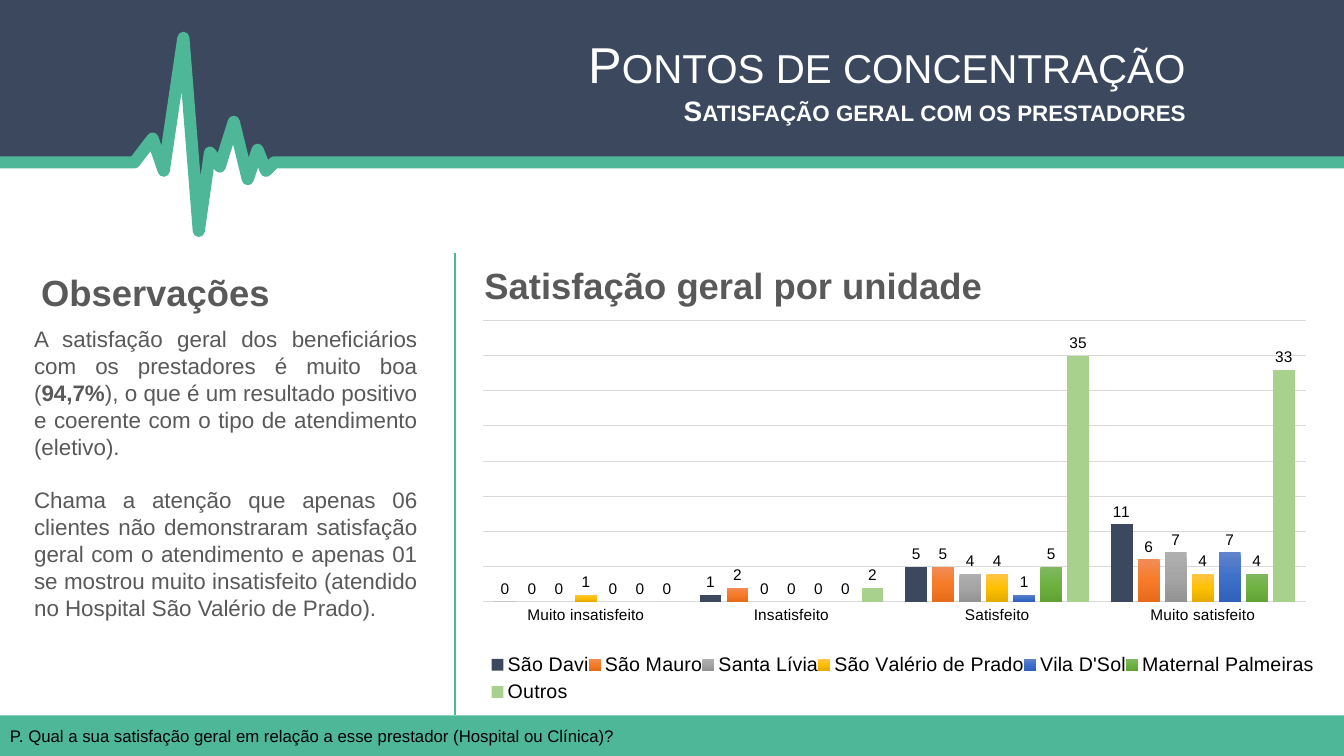
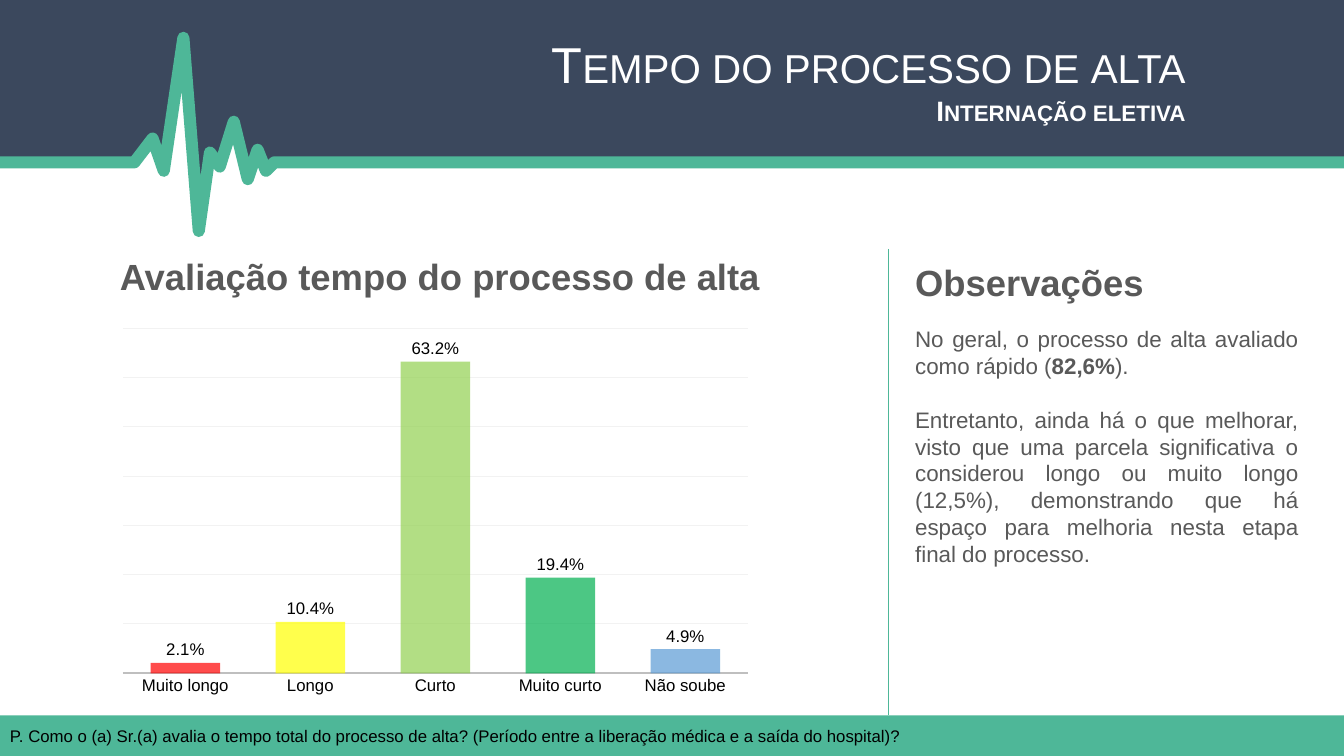
import copy

import pptx
import pptx.chart.data
import pptx.dml.color
import pptx.enum.chart
import pptx.enum.shapes
import pptx.enum.text
import pptx.oxml
import pptx.oxml.ns
import pptx.util
from lxml import etree

Pt = pptx.util.Pt
RGB = pptx.dml.color.RGBColor
qn = pptx.oxml.ns.qn
ALIGN = pptx.enum.text.PP_ALIGN

NAVY = RGB(0x3B, 0x48, 0x5D)
GREEN = RGB(0x4E, 0xB7, 0x98)
GRAY = RGB(0x59, 0x59, 0x59)
WHITE = RGB(0xFF, 0xFF, 0xFF)
BLACK = RGB(0, 0, 0)
GRID = RGB(0xD9, 0xD9, 0xD9)
PALE_GRID = RGB(0xF2, 0xF2, 0xF2)
AXIS = RGB(0xBF, 0xBF, 0xBF)
LEAF = RGB(0xA9, 0xD1, 0x8E)
ORANGES = (RGB(0xF1, 0x8C, 0x57), RGB(0xF6, 0x7B, 0x28), RGB(0xE5, 0x6C, 0x19))
SILVERS = (RGB(0xAF, 0xAF, 0xAF), RGB(0xA5, 0xA5, 0xA5), RGB(0x93, 0x93, 0x93))
GOLDS = (RGB(0xFF, 0xC6, 0x4B), RGB(0xFF, 0xC0, 0x00), RGB(0xE3, 0xAB, 0x00))
BLUES = (RGB(0x61, 0x83, 0xCB), RGB(0x3E, 0x70, 0xCA), RGB(0x30, 0x62, 0xBB))
GREENS = (RGB(0x81, 0xB8, 0x61), RGB(0x6F, 0xB2, 0x42), RGB(0x62, 0xA3, 0x36))
RATINGS = (RGB(0xFF, 0, 0), RGB(0xFF, 0xFF, 0), RGB(0x92, 0xD0, 0x50),
           RGB(0, 0xB0, 0x50), RGB(0x5B, 0x9B, 0xD5))

FONT = "Arial"
WIDTH, HEIGHT = 960, 540
BAR_TOP = 511
PULSE = [(0, 116), (96, 116), (108.7, 99.4), (117.4, 121.7), (131, 27.2),
         (141.8, 164.9), (149.8, 109), (157.3, 118.8), (167, 87.1),
         (177.3, 128.5), (184.5, 107.3), (190.3, 121.7), (195.8, 116),
         (WIDTH, 116)]


def style(font, size, color, bold=False):
    font.name = FONT
    font.size = Pt(size)
    font.color.rgb = color
    font.bold = bold


def write(p, text, size, color, bold=False):
    for i, part in enumerate(text.split("**")):
        r = p.add_run()
        r.text = part
        style(r.font, size, color, bold or i % 2 == 1)


def add_text_box(s, left, top, width, height):
    tf = s.shapes.add_textbox(Pt(left), Pt(top), Pt(width), Pt(height)).text_frame
    tf.word_wrap = True
    tf.auto_size = pptx.enum.text.MSO_AUTO_SIZE.SHAPE_TO_FIT_TEXT
    return tf


def add_outline(s, points, closed):
    builder = s.shapes.build_freeform(*points[0], scale=Pt(1))
    builder.add_line_segments(points[1:], close=closed)
    sp = builder.convert_to_shape()
    sp.shadow.inherit = False
    return sp


def add_header(s, title, subtitle):
    band = add_outline(s, [(0, 0)] + PULSE + [(WIDTH, 0)], True)
    band.fill.solid()
    band.fill.fore_color.rgb = NAVY
    band.line.fill.background()

    pulse = add_outline(s, PULSE, False)
    pulse.fill.background()
    pulse.line.color.rgb = GREEN
    pulse.line.width = Pt(8.64)
    etree.SubElement(pulse.line._get_or_add_ln(), qn("a:round"))

    tf = add_text_box(s, 177, 20.2, 677, 75)
    for p, text, size, bold in ((tf.paragraphs[0], title, 36, False),
                                (tf.add_paragraph(), subtitle, 20, True)):
        p.alignment = ALIGN.RIGHT
        write(p, text, size, WHITE, bold)
        p.runs[0].font._element.set("cap", "small")


def add_footer(s, question):
    sp = s.shapes.add_shape(pptx.enum.shapes.MSO_SHAPE.RECTANGLE, 0, Pt(BAR_TOP),
                            Pt(WIDTH), Pt(HEIGHT - BAR_TOP))
    sp.shadow.inherit = False
    sp.fill.solid()
    sp.fill.fore_color.rgb = GREEN
    sp.line.fill.background()
    sp.text_frame.vertical_anchor = pptx.enum.text.MSO_ANCHOR.MIDDLE
    p = sp.text_frame.paragraphs[0]
    p.text = question
    p.alignment = ALIGN.LEFT
    style(p.runs[0].font, 12, BLACK)


def add_heading(s, left, top, width, text):
    tf = add_text_box(s, left, top, width, 39)
    write(tf.paragraphs[0], text, 26, GRAY, True)


def add_notes_text(s, left, height, paragraphs):
    tf = add_text_box(s, left, 229, 288, height)
    for i, text in enumerate(paragraphs):
        p = tf.add_paragraph() if i else tf.paragraphs[0]
        p.alignment = ALIGN.JUSTIFY
        if i:
            p.space_before = Pt(19)
        write(p, text, 16, GRAY)


def add_divider(s, x, top, bottom):
    line = s.shapes.add_connector(pptx.enum.shapes.MSO_CONNECTOR.STRAIGHT,
                                  Pt(x), Pt(top), Pt(x), Pt(bottom))
    line.line.color.rgb = GREEN
    line.line.width = Pt(1)
    etree.SubElement(line._element.spPr, qn("a:effectLst"))


def add_columns(s, box, cats, series, fmt, top_value, step, gap, overlap,
                label_size, grid, axis):
    data = pptx.chart.data.CategoryChartData(number_format=fmt)
    data.categories = cats
    for name, values in series:
        data.add_series(name, values)
    chart = s.shapes.add_chart(pptx.enum.chart.XL_CHART_TYPE.COLUMN_CLUSTERED,
                               *[Pt(v) for v in box], data).chart
    chart.has_title = False
    chart.has_legend = False
    style(chart.font, label_size, BLACK)

    cat_axis = chart.category_axis
    cat_axis.major_tick_mark = pptx.enum.chart.XL_TICK_MARK.NONE
    cat_axis.format.line.color.rgb = axis[0]
    cat_axis.format.line.width = Pt(axis[1])
    style(cat_axis.tick_labels.font, label_size, BLACK)

    val_axis = chart.value_axis
    val_axis.visible = False
    val_axis.minimum_scale = 0
    val_axis.maximum_scale = top_value
    val_axis.major_unit = step
    val_axis.has_major_gridlines = True
    val_axis.major_gridlines.format.line.color.rgb = grid
    val_axis.major_gridlines.format.line.width = Pt(0.75)

    plot = chart.plots[0]
    plot.vary_by_categories = False
    plot.gap_width = gap
    plot.overlap = overlap
    plot.has_data_labels = True
    labels = plot.data_labels
    labels.show_value = True
    labels.position = pptx.enum.chart.XL_LABEL_POSITION.OUTSIDE_END
    labels.number_format = fmt
    labels.number_format_is_linked = False
    style(labels.font, label_size, BLACK)
    return chart


def fill_gradient(series, colors):
    fill = series.format.fill
    fill.gradient()
    fill.gradient_angle = 270
    stops = series._element.find(".//" + qn("a:gsLst"))
    stops.insert(1, copy.deepcopy(stops[0]))
    for i, (stop, color) in enumerate(zip(fill.gradient_stops, colors)):
        stop.position = i / 2
        stop.color.rgb = color


def fill_solid(item, color):
    item.format.fill.solid()
    item.format.fill.fore_color.rgb = color


def place(element, index, settings):
    for old in element.findall(qn("c:layout")):
        element.remove(old)
    layout = etree.Element(qn("c:layout"))
    manual = etree.SubElement(layout, qn("c:manualLayout"))
    for tag, value in settings.items():
        etree.SubElement(manual, qn("c:" + tag)).set("val", str(value))
    element.insert(index, layout)


def add_unit_chart(s):
    units = [
        ("São Davi", (0, 1, 5, 11), NAVY),
        ("São Mauro", (0, 2, 5, 6), ORANGES),
        ("Santa Lívia", (0, 0, 4, 7), SILVERS),
        ("São Valério de Prado", (1, 0, 4, 4), GOLDS),
        ("Vila D'Sol", (0, 0, 1, 7), BLUES),
        ("Maternal Palmeiras", (0, 0, 5, 4), GREENS),
        ("Outros", (0, 2, 35, 33), LEAF),
    ]
    cats = ("Muito insatisfeito", "Insatisfeito", "Satisfeito", "Muito satisfeito")
    chart = add_columns(s, (339, 213.8, 612, 304.3), cats, [u[:2] for u in units],
                        "General", 40, 5, 100, -24, 11, GRID, (GRID, 1))
    for series, (_, _, color) in zip(chart.plots[0].series, units):
        if isinstance(color, RGB):
            fill_solid(series, color)
        else:
            fill_gradient(series, color)
        series.format.line.fill.background()
    chart.has_legend = True
    legend = chart.legend
    legend.position = pptx.enum.chart.XL_LEGEND_POSITION.BOTTOM
    legend.include_in_layout = False
    style(legend.font, 14, BLACK)
    edges = {"xMode": "edge", "yMode": "edge"}
    place(chart._chartSpace.chart.plotArea, 0,
          {"layoutTarget": "inner", **edges, "x": 0.01, "y": 0.05, "w": 0.96, "h": 0.66})
    place(legend._element, 1, {**edges, "x": 0.02, "y": 0.82, "w": 0.96, "h": 0.14})


def add_discharge_chart(s):
    cats = ("Muito longo", "Longo", "Curto", "Muito curto", "Não soube")
    values = (0.021, 0.104, 0.632, 0.194, 0.049)
    chart = add_columns(s, (78.5, 229, 465, 273), cats, [("Series 1", values)],
                        "0.0%", 0.7, 0.1, 80, 25, 12, PALE_GRID, (AXIS, 1.25))
    series = chart.plots[0].series[0]
    for i, color in enumerate(RATINGS):
        fill_solid(series.points[i], color)
    for clr in series._element.findall(qn("c:dPt") + "//" + qn("a:srgbClr")):
        etree.SubElement(clr, qn("a:alpha")).set("val", "70000")


def add_base(prs, title, subtitle, question):
    s = prs.slides.add_slide(prs.slide_layouts[6])
    add_header(s, title, subtitle)
    add_footer(s, question)
    return s


def main():
    prs = pptx.Presentation()
    prs.slide_width, prs.slide_height = Pt(WIDTH), Pt(HEIGHT)

    s = add_base(prs, "Pontos de concentração", "Satisfação geral com os prestadores",
                 "P. Qual a sua satisfação geral em relação a esse prestador "
                 "(Hospital ou Clínica)?")
    add_notes_text(s, 17.3, 201, [
        "A satisfação geral dos beneficiários com os prestadores é muito boa "
        "(**94,7%**), o que é um resultado positivo e coerente com o tipo de "
        "atendimento (eletivo).",
        "Chama a atenção que apenas 06 clientes não demonstraram satisfação geral "
        "com o atendimento e apenas 01 se mostrou muito insatisfeito (atendido no "
        "Hospital São Valério de Prado)."])
    add_heading(s, 339, 184.3, 405, "Satisfação geral por unidade")
    add_divider(s, 325, 180.7, BAR_TOP)
    add_heading(s, 22.3, 189.4, 302, "Observações")
    add_unit_chart(s)

    s = add_base(prs, "Tempo do processo de alta", "Internação eletiva",
                 "P. Como o (a) Sr.(a) avalia o tempo total do processo de alta? "
                 "(Período entre a liberação médica e a saída do hospital)?")
    add_heading(s, 646.6, 182.2, 302, "Observações")
    add_notes_text(s, 646.6, 163, [
        "No geral, o processo de alta avaliado como rápido (**82,6%**).",
        "Entretanto, ainda há o que melhorar, visto que uma parcela significativa o "
        "considerou longo ou muito longo (12,5%), demonstrando que há espaço para "
        "melhoria nesta etapa final do processo."])
    add_heading(s, 78.5, 177.8, 498, "Avaliação tempo do processo de alta")
    add_divider(s, 634.5, 177.8, BAR_TOP)
    add_discharge_chart(s)

    prs.save("out.pptx")


if __name__ == "__main__":
    main()
